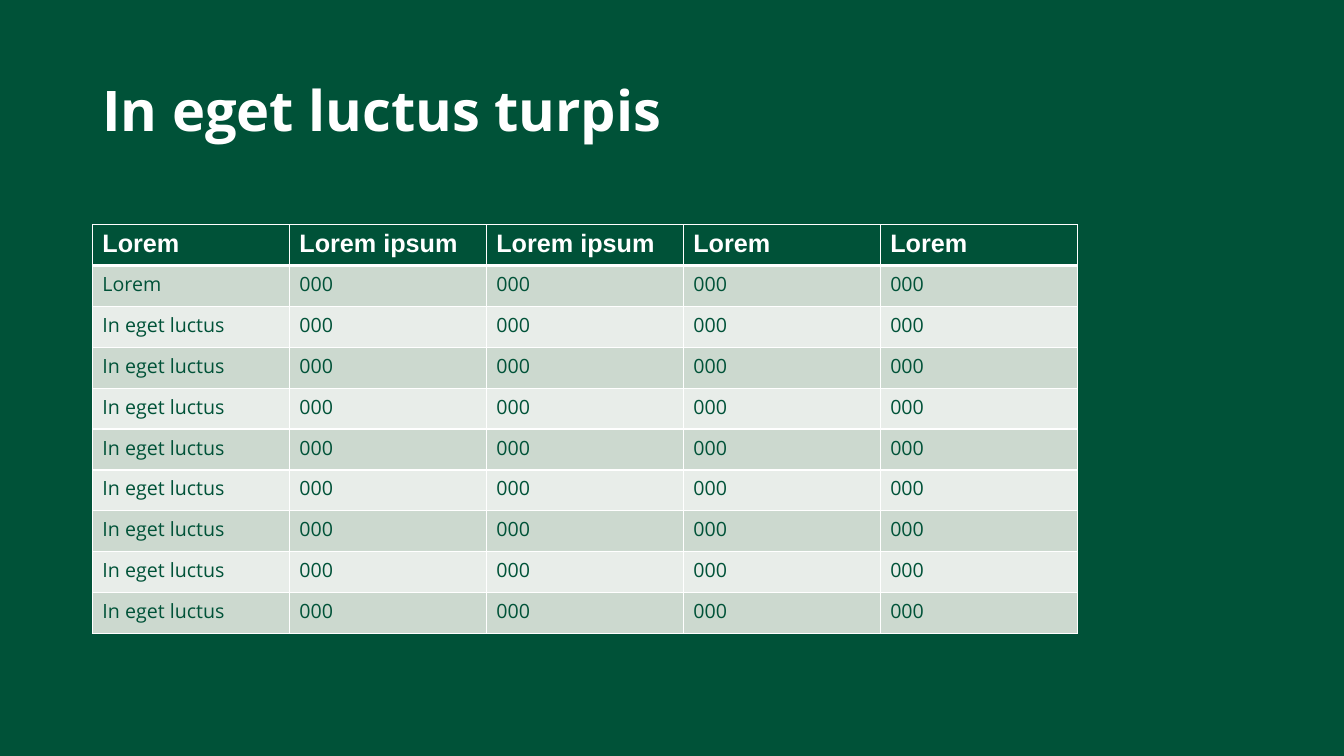
from dataclasses import dataclass

from lxml import etree
from pptx import Presentation
from pptx.dml.color import RGBColor
from pptx.enum.text import MSO_ANCHOR
from pptx.oxml.ns import qn
from pptx.util import Pt

TOP = MSO_ANCHOR.TOP


@dataclass(frozen=True)
class Theme:
    green: str = "005238"
    white: str = "FFFFFF"
    band_dark: str = "CCD9CF"
    band_light: str = "E8EDE9"
    heading_font: str = "Arial"
    body_font: str = "Open Sans"
    title_size: float = 40
    header_size: float = 18
    body_size: float = 14
    thin_rule: float = 1
    thick_rule: float = 3


THEME = Theme()

HEADER = ["Lorem", "Lorem ipsum", "Lorem ipsum", "Lorem", "Lorem"]
ROW_LABELS = ["Lorem"] + ["In eget luctus"] * 8
ROWS = [HEADER] + [[label] + ["000"] * 4 for label in ROW_LABELS]


def write_text(text_frame, text, *, font, size, color, bold=False, line_spacing=None):
    paragraph = text_frame.paragraphs[0]
    paragraph.line_spacing = line_spacing
    run = paragraph.add_run()
    run.text = text
    run.font.name = font
    run.font.size = Pt(size)
    run.font.bold = bold
    run.font.color.rgb = RGBColor.from_string(color)


def set_borders(cell, color, widths):
    """Add solid borders; widths maps L, R, T, B in that order to points."""
    properties = cell._tc.get_or_add_tcPr()
    for side, width in widths.items():
        line = etree.SubElement(properties, qn(f"a:ln{side}"), w=str(Pt(width)))
        fill = etree.SubElement(line, qn("a:solidFill"))
        etree.SubElement(fill, qn("a:srgbClr"), val=color)


def add_title(slide, text, left, top, width, height):
    shape = slide.shapes.add_textbox(Pt(left), Pt(top), Pt(width), Pt(height))
    shape.text_frame.word_wrap = True
    shape.text_frame.vertical_anchor = TOP
    write_text(shape.text_frame, text, font=THEME.body_font, size=THEME.title_size,
               color=THEME.white, bold=True, line_spacing=0.9)


def style_cell(cell, text, row_index):
    is_header = row_index == 0
    widths = dict.fromkeys("LRTB", THEME.thin_rule)
    if is_header:
        fill_color = THEME.green
        widths["B"] = THEME.thick_rule
        text_format = dict(font=THEME.heading_font, size=THEME.header_size,
                           color=THEME.white, bold=True)
    else:
        fill_color = THEME.band_dark if row_index % 2 else THEME.band_light
        if row_index == 1:
            widths["T"] = THEME.thick_rule
        text_format = dict(font=THEME.body_font, size=THEME.body_size, color=THEME.green)
    set_borders(cell, THEME.white, widths)
    cell.fill.solid()
    cell.fill.fore_color.rgb = RGBColor.from_string(fill_color)
    write_text(cell.text_frame, text, **text_format)


def add_data_table(slide, rows, left, top, width, height):
    column_count = len(rows[0])
    frame = slide.shapes.add_table(len(rows), column_count,
                                   Pt(left), Pt(top), Pt(width), Pt(height))
    table = frame.table
    for column in table.columns:
        column.width = Pt(width / column_count)
    for row_index, values in enumerate(rows):
        table.rows[row_index].height = Pt(height / len(rows))
        for column_index, text in enumerate(values):
            style_cell(table.cell(row_index, column_index), text, row_index)


def main():
    presentation = Presentation()
    presentation.slide_width = Pt(960)
    presentation.slide_height = Pt(540)
    slide = presentation.slides.add_slide(presentation.slide_layouts[6])
    slide.background.fill.solid()
    slide.background.fill.fore_color.rgb = RGBColor.from_string(THEME.green)

    left, width = 66, 703.5
    add_data_table(slide, ROWS, left, 160.5, width, 292)
    add_title(slide, "In eget luctus turpis", left, 56, width, 104.5)
    presentation.save("out.pptx")


if __name__ == "__main__":
    main()
